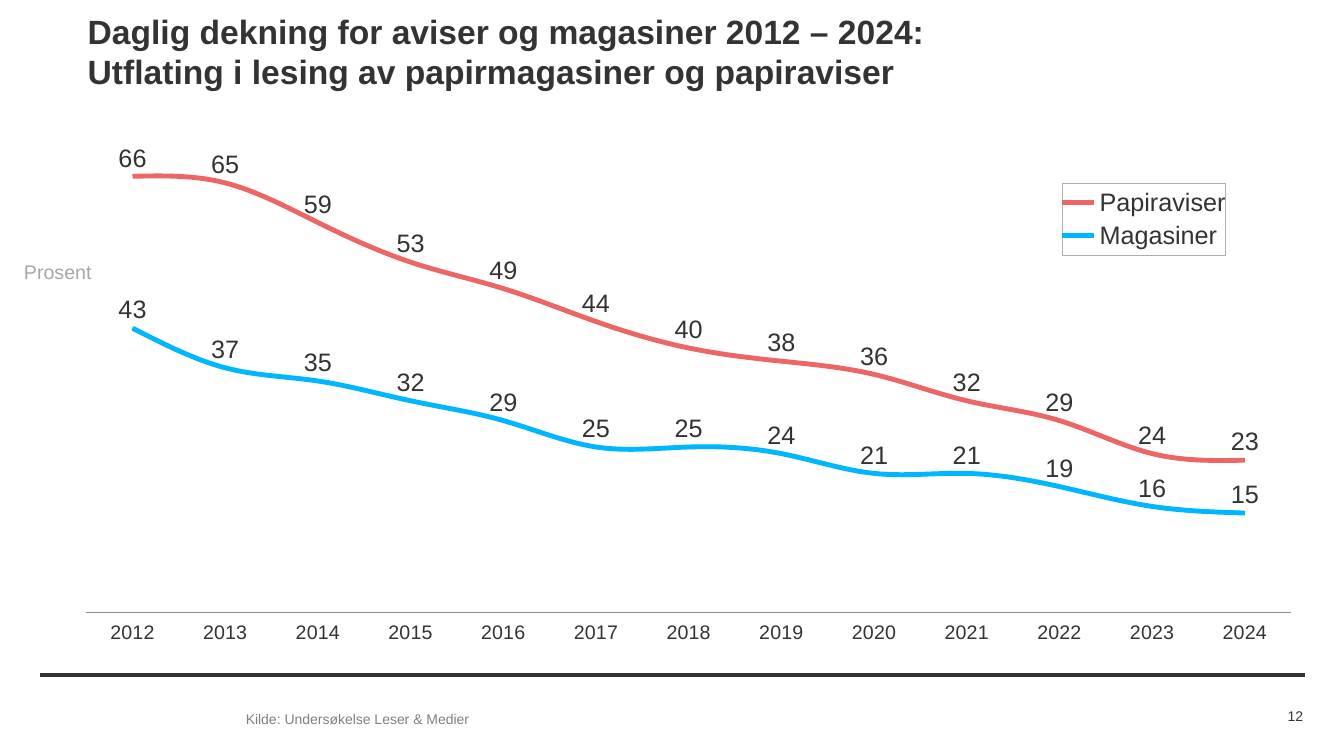
from lxml import etree
from pptx import Presentation
from pptx.chart.data import CategoryChartData
from pptx.dml.color import RGBColor
from pptx.enum.chart import (
    XL_CHART_TYPE as ChartType,
    XL_LABEL_POSITION as LabelPosition,
    XL_LEGEND_POSITION as LegendPosition,
    XL_MARKER_STYLE as MarkerStyle,
    XL_TICK_LABEL_POSITION as TickLabelPosition,
    XL_TICK_MARK as TickMark,
)
from pptx.enum.shapes import MSO_CONNECTOR as Connector
from pptx.enum.text import MSO_ANCHOR as Anchor, MSO_AUTO_SIZE as AutoSize, PP_ALIGN as Align
from pptx.oxml import parse_xml
from pptx.oxml.ns import nsdecls, qn
from pptx.util import Pt

FONT = "Arial"
COLORS = {
    "text": "333333",
    "source": "808080",
    "unit": "A6A6A6",
    "axis": "8C8C8C",
    "legend border": "B0B0A6",
    "Papiraviser": "ED6666",
    "Magasiner": "00B6FF",
}
YEARS = [str(year) for year in range(2012, 2025)]
READERSHIP = {
    "Papiraviser": [66, 65, 59, 53, 49, 44, 40, 38, 36, 32, 29, 24, 23],
    "Magasiner": [43, 37, 35, 32, 29, 25, 25, 24, 21, 21, 19, 16, 15],
}


def color(name):
    return RGBColor.from_string(COLORS[name])


def style_font(font, size, color_name="text", bold=False):
    font.name = FONT
    font.size = Pt(size)
    font.bold = bold
    font.color.rgb = color(color_name)


def add_title(slide, text):
    title = slide.shapes.title
    title.left, title.top, title.width, title.height = Pt(55.44), Pt(5), Pt(874), Pt(63.4)
    frame = title.text_frame
    frame.text = text
    frame.auto_size = AutoSize.NONE
    frame.vertical_anchor = Anchor.MIDDLE
    for paragraph in frame.paragraphs:
        paragraph.alignment = Align.LEFT
        for run in paragraph.runs:
            style_font(run.font, 24, bold=True)


def add_text(slide, text, box, size, color_name, align=Align.LEFT, wrap=True,
             anchor=Anchor.TOP, margins=(7.2, 3.6)):
    text_box = slide.shapes.add_textbox(*map(Pt, box))
    frame = text_box.text_frame
    frame.word_wrap = wrap
    frame.vertical_anchor = anchor
    frame.margin_left = frame.margin_right = Pt(margins[0])
    frame.margin_top = frame.margin_bottom = Pt(margins[1])
    frame.text = text
    paragraph = frame.paragraphs[0]
    paragraph.alignment = align
    style_font(paragraph.runs[0].font, size, color_name)


def add_rule(slide):
    rule = slide.shapes.add_connector(Connector.STRAIGHT, Pt(28.5), Pt(482), Pt(932), Pt(482))
    rule.line.color.rgb = color("text")
    rule.line.width = Pt(3)
    etree.SubElement(rule.element.spPr, qn("a:effectLst"))


def set_layout(parent, index, x, y, width, height, inner=False):
    """Place a chart part by fractions of the chart's size."""
    for layout in parent.findall(qn("c:layout")):
        parent.remove(layout)
    target = '<c:layoutTarget val="inner"/>' if inner else ""
    parent.insert(index, parse_xml(
        f'<c:layout {nsdecls("c")}><c:manualLayout>{target}'
        '<c:xMode val="edge"/><c:yMode val="edge"/>'
        f'<c:x val="{x}"/><c:y val="{y}"/><c:w val="{width}"/><c:h val="{height}"/>'
        '</c:manualLayout></c:layout>'))


def format_axes(chart):
    years = chart.category_axis
    years.has_major_gridlines = False
    years.major_tick_mark = years.minor_tick_mark = TickMark.NONE
    years.tick_label_position = TickLabelPosition.LOW
    years.format.line.color.rgb = color("axis")
    years.format.line.width = Pt(0.75)
    style_font(years.tick_labels.font, 14)
    percent = chart.value_axis
    percent.minimum_scale, percent.maximum_scale, percent.major_unit = 0, 75, 10
    percent.has_major_gridlines = False
    percent.visible = False


def format_series(series):
    series.smooth = True
    series.marker.style = MarkerStyle.NONE
    series.format.line.color.rgb = color(series.name)
    series.format.line.width = Pt(3.5)
    labels = series.data_labels
    labels.show_value = True
    labels.position = LabelPosition.ABOVE
    labels.number_format = "0"
    labels.number_format_is_linked = False
    style_font(labels.font, 18)


def format_legend(chart):
    chart.has_legend = True
    legend = chart.legend
    legend.position = LegendPosition.RIGHT
    legend.include_in_layout = False
    style_font(legend.font, 18)
    element = legend._element
    set_layout(element, 1, 0.81, 0.12, 0.13, 0.13)
    element.find(qn("c:overlay")).addnext(parse_xml(
        f'<c:spPr {nsdecls("c", "a")}><a:ln w="{Pt(0.75)}"><a:solidFill>'
        f'<a:srgbClr val="{COLORS["legend border"]}"/></a:solidFill></a:ln></c:spPr>'))


def add_readership_chart(slide):
    data = CategoryChartData(number_format="0")
    data.categories = YEARS
    for name, values in READERSHIP.items():
        data.add_series(name, values)
    chart = slide.shapes.add_chart(
        ChartType.LINE, Pt(31), Pt(83.5), Pt(898.5), Pt(395.3), data).chart
    chart.has_title = False
    style_font(chart.font, 18)
    plot = chart.plots[0]
    plot.vary_by_categories = False
    for series in plot.series:
        format_series(series)
    format_axes(chart)
    format_legend(chart)
    plot_area = chart._chartSpace.chart.plotArea
    set_layout(plot_area, 0, 0.034, 0, 0.958, 0.895, inner=True)


def main():
    presentation = Presentation()
    presentation.slide_width, presentation.slide_height = Pt(960), Pt(540)
    slide = presentation.slides.add_slide(presentation.slide_layouts[5])
    add_rule(slide)
    add_readership_chart(slide)
    add_title(slide, "Daglig dekning for aviser og magasiner 2012 – 2024:\n"
                     "Utflating i lesing av papirmagasiner og papiraviser")
    add_text(slide, "Kilde: Undersøkelse Leser & Medier", (168.5, 504, 648, 19.4), 10, "source")
    add_text(slide, "Prosent", (10, 182.2, 63.4, 24.5), 14, "unit", wrap=False)
    add_text(slide, "12", (854.6, 504, 76.3, 14.4), 10, "text", align=Align.RIGHT,
             anchor=Anchor.MIDDLE, margins=(0, 0))
    presentation.save("out.pptx")


if __name__ == "__main__":
    main()
